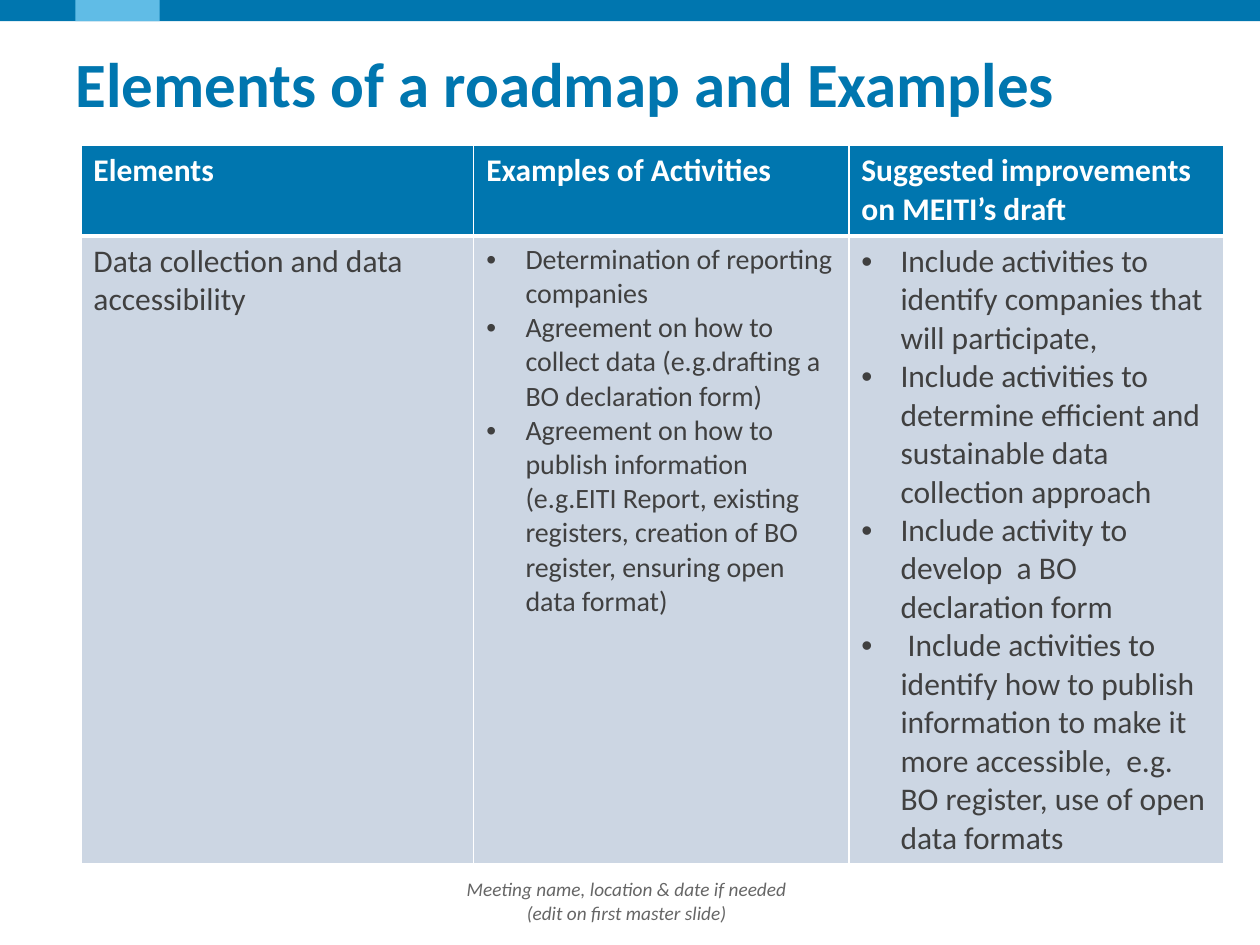
"""Build the roadmap elements slide with its three-column table."""
import lxml.etree
import pptx
import pptx.util
import pptx.dml.color
import pptx.enum.shapes
import pptx.enum.text
import pptx.oxml.ns

Cm, Pt = pptx.util.Cm, pptx.util.Pt
ALIGN, ANCHOR = pptx.enum.text.PP_ALIGN, pptx.enum.text.MSO_ANCHOR

TITLE = "Elements of a roadmap and Examples"
FOOTER = "Meeting name, location & date if needed\n(edit on first master slide)"
HEADERS = ["Elements", "Examples of Activities", "Suggested improvements on MEITI’s draft"]
BODY = [
    {"size": "table", "bullet": False, "items": ["Data collection and data accessibility"]},
    {"size": "small", "bullet": True, "items": [
        "Determination of reporting companies",
        "Agreement on how to collect data (e.g.drafting a BO declaration form)",
        "Agreement on how to publish information (e.g.EITI Report, existing registers, "
        "creation of BO register, ensuring open data format)",
    ]},
    {"size": "table", "bullet": True, "items": [
        "Include activities to identify companies that will participate,",
        "Include activities to determine efficient and sustainable data collection approach",
        "Include activity to develop  a BO declaration form",
        " Include activities to identify how to publish information to make it more accessible,  "
        "e.g. BO register, use of open data formats",
    ]},
]
BANDS = [("blue", 0, 25.4), ("sky", 1.52, 1.7)]
COLUMNS = [7.92, 7.56, 7.56]
ROWS = [1.83, 12.09]

THEME = {
    "font": "Calibri",
    "color": {"blue": "0076AF", "sky": "60BCE6", "pale": "CCD6E3",
              "white": "FFFFFF", "text": "404040", "grey": "666666"},
    "size": {"title": 36, "table": 18, "small": 16, "footer": 11},
}


def rgb(name):
    """Return a theme colour."""
    return pptx.dml.color.RGBColor.from_string(THEME["color"][name])


def add_xml(parent, tag, **attributes):
    """Append a DrawingML element to its parent."""
    element = lxml.etree.SubElement(parent, pptx.oxml.ns.qn(tag))
    for key, value in attributes.items():
        element.set(key, str(value))
    return element


def write(tf, items, size, color, bold=False, italic=False, align=ALIGN.LEFT, bullet=False):
    """Fill a text frame with one paragraph for each item."""
    tf.word_wrap = True
    for i, item in enumerate(items):
        p = tf.paragraphs[0] if i == 0 else tf.add_paragraph()
        p.alignment = align
        if bullet:
            pPr = p._p.get_or_add_pPr()
            pPr.set("marL", str(Cm(0.79)))
            pPr.set("indent", str(-Cm(0.79)))
            add_xml(pPr, "a:buFont", typeface="Arial")
            add_xml(pPr, "a:buChar", char="•")
        for j, line in enumerate(item.split("\n")):
            if j:
                p.add_line_break()
            r = p.add_run()
            r.text = line
            r.font.name = THEME["font"]
            r.font.size = Pt(THEME["size"][size])
            r.font.color.rgb = rgb(color)
            r.font.bold, r.font.italic = bold, italic


def place(sp, left, top, width, height):
    """Position a text shape and remove its side insets."""
    sp.left, sp.top, sp.width, sp.height = Cm(left), Cm(top), Cm(width), Cm(height)
    tf = sp.text_frame
    tf.auto_size = pptx.enum.text.MSO_AUTO_SIZE.NONE
    tf.margin_left = tf.margin_right = 0
    tf.margin_top = tf.margin_bottom = Cm(0.13)
    return tf


def format_cell(cell, fill, bottom):
    """Set the borders and the fill of a table cell."""
    tcPr = cell._tc.get_or_add_tcPr()
    for side, width in {"L": 1, "R": 1, "T": 1, "B": bottom}.items():
        ln = add_xml(tcPr, f"a:ln{side}", w=Pt(width))
        add_xml(add_xml(ln, "a:solidFill"), "a:srgbClr", val=THEME["color"]["white"])
    cell.fill.solid()
    cell.fill.fore_color.rgb = rgb(fill)


def add_bands(s):
    """Draw the coloured strip along the top."""
    for color, left, width in BANDS:
        sp = s.shapes.add_shape(pptx.enum.shapes.MSO_SHAPE.RECTANGLE,
                                Cm(left), Cm(-0.03), Cm(width), Cm(0.46))
        sp.shadow.inherit = False
        sp.fill.solid()
        sp.fill.fore_color.rgb = rgb(color)
        sp.line.fill.background()


def add_roadmap_table(s):
    """Add the table of elements, examples and improvements."""
    table = s.shapes.add_table(len(ROWS), len(COLUMNS), Cm(1.63), Cm(2.93),
                               Cm(sum(COLUMNS)), Cm(sum(ROWS))).table
    for row, height in zip(table.rows, ROWS):
        row.height = Cm(height)
    for i, (width, header, body) in enumerate(zip(COLUMNS, HEADERS, BODY)):
        table.columns[i].width = Cm(width)
        head, cell = table.cell(0, i), table.cell(1, i)
        format_cell(head, "blue", bottom=3)
        write(head.text_frame, [header], "table", "white", bold=True)
        format_cell(cell, "pale", bottom=1)
        write(cell.text_frame, body["items"], body["size"], "text", bullet=body["bullet"])


def main():
    """Create and save the presentation."""
    prs = pptx.Presentation()
    prs.slide_width, prs.slide_height = Cm(25.4), Cm(19.05)
    s = prs.slides.add_slide(prs.slide_layouts[5])
    add_bands(s)
    tf = place(s.shapes.title, 1.52, 0.76, 21.87, 1.83)
    tf.vertical_anchor = ANCHOR.TOP
    write(tf, [TITLE], "title", "blue", bold=True)
    tf = place(s.shapes.add_textbox(0, 0, 0, 0), 6.17, 17.65, 12.93, 1.02)
    tf.vertical_anchor = ANCHOR.MIDDLE
    write(tf, [FOOTER], "footer", "grey", italic=True, align=ALIGN.CENTER)
    add_roadmap_table(s)
    prs.save("out.pptx")


if __name__ == "__main__":
    main()
